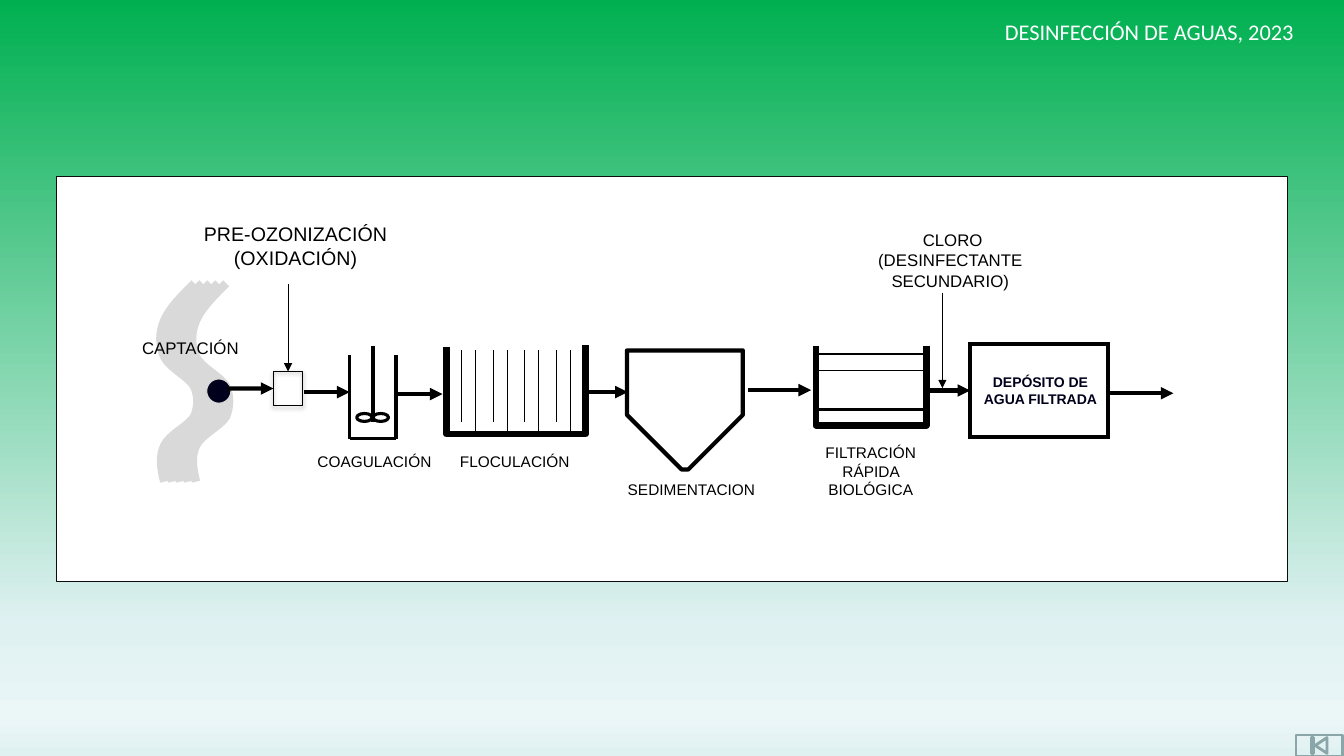
from copy import deepcopy

from lxml import etree
from pptx import Presentation
from pptx.dml.color import RGBColor
from pptx.enum.shapes import MSO_CONNECTOR, MSO_SHAPE
from pptx.enum.text import PP_ALIGN
from pptx.oxml.ns import qn
from pptx.util import Cm, Pt

BLACK = RGBColor(0x00, 0x00, 0x00)
WHITE = RGBColor(0xFF, 0xFF, 0xFF)
NAVY = RGBColor(0x00, 0x00, 0x1C)
PANEL_LINE = RGBColor(0x0D, 0x0D, 0x0D)
RIVER_GREY = RGBColor(0xD9, 0xD9, 0xD9)
BUTTON_GREY = RGBColor(0x8A, 0xA6, 0xA8)
BACKGROUND_STOPS = [
    (0, RGBColor(0x00, 0xB0, 0x50)),
    (0.83, RGBColor(0xE0, 0xF1, 0xF2)),
    (0.95, RGBColor(0xEB, 0xF6, 0xF7)),
    (1, RGBColor(0xE0, 0xF1, 0xF2)),
]

RECTANGLE = MSO_SHAPE.RECTANGLE
ELLIPSE = MSO_SHAPE.OVAL
SNIPPED = MSO_SHAPE.SNIP_2_SAME_RECTANGLE
BUTTON = MSO_SHAPE.ACTION_BUTTON_BEGINNING
STRAIGHT = MSO_CONNECTOR.STRAIGHT
LEFT, CENTER = PP_ALIGN.LEFT, PP_ALIGN.CENTER
TOP_SIDE, LEFT_SIDE = 0, 1

# River bank: start point, then two control points and an end point per bend
RIVER_BANK = [
    (4.9, 7.14),
    (4.57, 7.47), (4.27, 7.77), (4.14, 8.08),
    (4.01, 8.38), (4.01, 8.71), (4.14, 8.99),
    (4.27, 9.27), (4.78, 9.5), (4.9, 9.75),
    (5.0, 9.98), (5.0, 10.24), (4.9, 10.49),
    (4.78, 10.72), (4.27, 10.95), (4.14, 11.23),
    (4.01, 11.51), (4.06, 11.81), (4.14, 12.14),
]

# Text, left, top, width, height, size, alignment
LABELS = [
    ("COAGULACIÓN", 7.75, 11.27, 3.61, 0.74, 11, LEFT),
    ("FLOCULACIÓN", 11.34, 11.28, 3.73, 0.74, 11, LEFT),
    ("SEDIMENTACION", 15.57, 11.98, 4.22, 0.74, 11, LEFT),
    ("FILTRACIÓN RÁPIDA BIOLÓGICA", 20.14, 11.05, 3.61, 1.68, 11, CENTER),
    ("CAPTACIÓN", 3.33, 8.39, 3.2, 0.76, 12, LEFT),
    ("PRE-OZONIZACIÓN (OXIDACIÓN)", 4.2, 5.48, 6.5, 1.45, 14, CENTER),
    (" CLORO (DESINFECTANTE SECUNDARIO)", 21.18, 5.67, 5.54, 1.8, 12, CENTER),
]


def paint_background(slide):
    fill = slide.background.fill
    fill.gradient()
    fill.gradient_angle = 270
    stop_list = next(slide.element.iter(qn("a:gsLst")))
    while len(stop_list) < len(BACKGROUND_STOPS):
        stop_list.append(deepcopy(stop_list[0]))
    for stop, (position, color) in zip(fill.gradient_stops, BACKGROUND_STOPS):
        stop.position = position
        stop.color.rgb = color


def style_shape(shape, color, weight, fill=None):
    shape.shadow.inherit = False
    shape.line.color.rgb = color
    shape.line.width = Pt(weight)
    if fill is None:
        shape.fill.background()
    else:
        shape.fill.solid()
        shape.fill.fore_color.rgb = fill


def add_box(slide, kind, left, top, width, height, weight, color=BLACK, fill=None):
    box = slide.shapes.add_shape(kind, Cm(left), Cm(top), Cm(width), Cm(height))
    style_shape(box, color, weight, fill)
    return box


def add_outline(slide, points, weight, color=BLACK):
    (start, *rest) = [(Cm(x), Cm(y)) for x, y in points]
    builder = slide.shapes.build_freeform(*start)
    builder.add_line_segments(rest, close=False)
    outline = builder.convert_to_shape()
    style_shape(outline, color, weight)
    return outline


def bend_segments(outline):
    """Turn each three line segments into one cubic curve."""
    segments = list(outline.element.iter(qn("a:lnTo")))
    for first in range(0, len(segments), 3):
        curve = etree.Element(qn("a:cubicBezTo"))
        segments[first].addprevious(curve)
        for segment in segments[first:first + 3]:
            curve.append(segment[0])
            segment.getparent().remove(segment)


def add_line(slide, x1, y1, x2, y2, weight, arrow=False):
    line = slide.shapes.add_connector(STRAIGHT, Cm(x1), Cm(y1), Cm(x2), Cm(y2))
    line.line.color.rgb = BLACK
    line.line.width = Pt(weight)
    properties = line.element.spPr
    if arrow:
        etree.SubElement(properties.find(qn("a:ln")), qn("a:tailEnd"), type="triangle")
    etree.SubElement(properties, qn("a:effectLst"))
    return line


def add_text(slide, text, left, top, width, height, size, align,
             color=BLACK, name="Arial", bold=False):
    box = slide.shapes.add_textbox(Cm(left), Cm(top), Cm(width), Cm(height))
    box.text_frame.word_wrap = True
    para = box.text_frame.paragraphs[0]
    para.alignment = align
    span = para.add_run()
    span.text = text
    for attribute, value in {"name": name, "size": Pt(size), "bold": bold}.items():
        setattr(span.font, attribute, value)
    span.font.color.rgb = color


def add_soft_shadow(box):
    effects = box.element.spPr.find(qn("a:effectLst"))
    shadow = etree.SubElement(effects, qn("a:outerShdw"), blurRad=str(Pt(3.1)),
                              dist=str(Pt(1.6)), dir="5400000", rotWithShape="0")
    color = etree.SubElement(shadow, qn("a:srgbClr"), val=str(BLACK))
    etree.SubElement(color, qn("a:alpha"), val="38000")


def sharpen_corners(box):
    etree.SubElement(box.element.spPr.find(qn("a:ln")), qn("a:miter"), lim="800000")


def draw_river(slide):
    for offset in (0.6, 0.8, 0, 0.2, 0.4):
        strand = [(x + offset, y) for x, y in RIVER_BANK]
        bend_segments(add_outline(slide, strand, 6, RIVER_GREY))
    add_box(slide, ELLIPSE, 5.21, 9.55, 0.61, 0.61, 0.75, RIVER_GREY, NAVY)


def draw_coagulation(slide):
    add_line(slide, 8.81, 11.05, 9.98, 11.05, 2.25)
    for wall in (8.81, 9.98):
        add_line(slide, wall, 8.94, wall, 11.05, 2.25)
    for blade in (8.99, 9.4):
        add_box(slide, ELLIPSE, blade, 10.42, 0.39, 0.2, 2.25)
    add_line(slide, 9.4, 10.64, 9.4, 8.73, 2.25)


def draw_flocculation(slide):
    add_outline(slide, [(11.25, 8.75), (11.25, 10.94), (14.76, 10.94), (14.76, 8.69)], 4.5)
    for pair in range(4):
        baffle = 11.63 + 0.8 * pair
        add_line(slide, baffle, 8.83, baffle, 10.64, 0.75)
        add_line(slide, baffle + 0.35, 8.83, baffle + 0.35, 10.94, 0.75)


def draw_sedimentation(slide):
    tank = add_box(slide, SNIPPED, 15.8, 8.83, 2.92, 3, 3)
    tank.rotation = 180
    tank.adjustments[0] = 0.471
    tank.adjustments[1] = 0


def draw_filter(slide):
    for top, height, weight in ((8.92, 1.4, 1), (10.33, 0.41, 2.25), (9.33, 0.99, 0.75)):
        add_box(slide, RECTANGLE, 20.56, top, 2.79, height, weight)
    add_outline(slide, [(20.56, 8.73), (20.56, 10.72), (23.35, 10.72), (23.35, 8.73)], 4.5)


def draw_flow(slide, ozone_box, deposit):
    # Arrows between stages
    for start, end, y in ((7.67, 8.81, 9.88), (10.01, 11.15, 9.93), (14.78, 15.82, 9.88),
                          (18.84, 20.44, 9.83), (27.97, 29.57, 9.91)):
        add_line(slide, start, y, end, y, 3, arrow=True)
    # Arrows joined to the boxes
    add_line(slide, 5.74, 9.79, 6.89, 9.79, 3, True).end_connect(ozone_box, LEFT_SIDE)
    add_line(slide, 23.42, 9.84, 24.45, 9.84, 3, True).end_connect(deposit, LEFT_SIDE)
    # Dosing points
    add_line(slide, 7.26, 7.15, 7.26, 9.36, 0.25, True).end_connect(ozone_box, TOP_SIDE)
    add_line(slide, 23.75, 7.38, 23.75, 9.78, 0.25, True)


def main():
    deck = Presentation()
    deck.slide_width, deck.slide_height = Cm(33.87), Cm(19.05)
    page = deck.slides.add_slide(deck.slide_layouts[6])

    # Page frame
    paint_background(page)
    add_box(page, BUTTON, 32.66, 18.52, 1.17, 0.53, 2, BUTTON_GREY)
    add_text(page, "DESINFECCIÓN DE AGUAS, 2023", 24.94, 0.33, 8.05, 0.94, 16,
             CENTER, WHITE, "Calibri")
    add_box(page, RECTANGLE, 1.42, 4.45, 31.04, 10.21, 0.75, PANEL_LINE, WHITE)

    # Treatment stages
    draw_river(page)
    ozone_box = add_box(page, RECTANGLE, 6.89, 9.36, 0.74, 0.86, 0.75)
    add_soft_shadow(ozone_box)
    draw_coagulation(page)
    draw_flocculation(page)
    draw_sedimentation(page)
    draw_filter(page)
    deposit = add_box(page, RECTANGLE, 24.45, 8.67, 3.48, 2.34, 3)
    sharpen_corners(deposit)
    add_text(page, "DEPÓSITO DE AGUA FILTRADA", 24.48, 9.28, 3.48, 1.12, 10,
             CENTER, NAVY, bold=True)

    # Flow and labels
    draw_flow(page, ozone_box, deposit)
    for label in LABELS:
        add_text(page, *label)
    deck.save("out.pptx")


if __name__ == "__main__":
    main()
